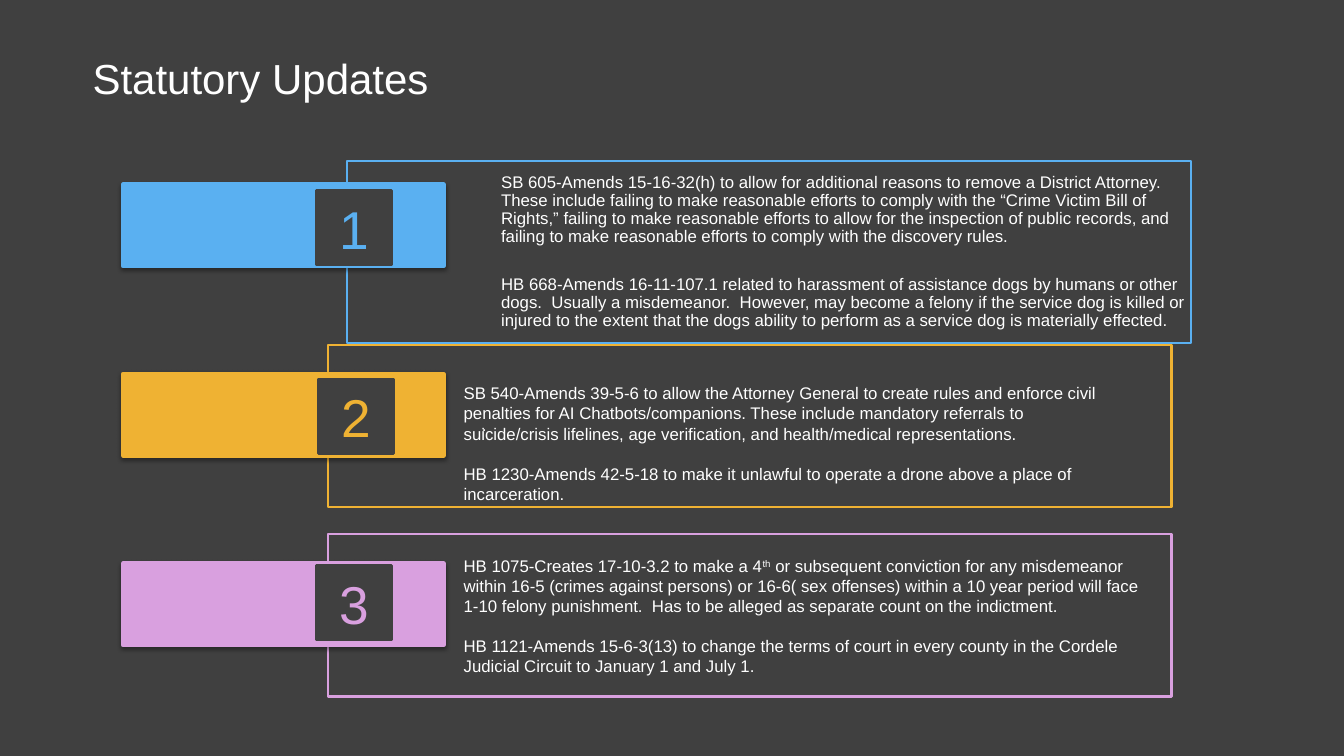
import pptx
import pptx.dml.color
import pptx.enum.shapes
import pptx.enum.text
import pptx.oxml
import pptx.util
from pptx.util import Inches

BACKGROUND = "404040"
WHITE = "FFFFFF"
ANCHOR = pptx.enum.text.MSO_ANCHOR
ALIGN = pptx.enum.text.PP_ALIGN
SHADOW = (
    '<a:effectLst xmlns:a="http://schemas.openxmlformats.org/drawingml/2006/main">'
    '<a:outerShdw blurRad="39370" dist="20320" dir="5400000" rotWithShape="0">'
    '<a:srgbClr val="000000"><a:alpha val="38000"/></a:srgbClr>'
    "</a:outerShdw></a:effectLst>"
)
BAR_LEFT, BAR_TOP, BAR_PITCH = 1.22, 1.83, 1.88

ROWS = [
    {
        "color": "5AB0F1",
        "frame": (3.44, 1.6, 8.37, 1.8),
        "badge": (3.14, 1.89),
        "frame_text": [
            ("SB 605-Amends 15-16-32(h) to allow for additional reasons to remove a "
             "District Attorney. These include failing to make reasonable efforts to "
             "comply with the “Crime Victim Bill of Rights,” failing to make reasonable "
             "efforts to allow for the inspection of public records, and failing to make "
             "reasonable efforts to comply with the discovery rules.",),
            ("HB 668-Amends 16-11-107.1 related to harassment of assistance dogs by "
             "humans or other dogs.  Usually a misdemeanor.  However, may become a felony "
             "if the service dog is killed or injured to the extent that the dogs ability "
             "to perform as a service dog is materially effected.",),
        ],
    },
    {
        "color": "EFB233",
        "frame": (3.25, 3.42, 8.37, 1.61),
        "badge": (3.16, 3.76),
        "frame_text": [(".",)],
        "note": (4.5, 3.75, 6.69, 1.31),
        "note_text": [
            ("SB 540-Amends 39-5-6 to allow the Attorney General to create rules and "
             "enforce civil penalties for AI Chatbots/companions. These include mandatory "
             "referrals to suicide/crisis lifelines, age verification, and health/medical "
             "representations.",),
            ("HB 1230-Amends 42-5-18 to make it unlawful to operate a drone above a place "
             "of incarceration.",),
        ],
    },
    {
        "color": "D9A0DF",
        "frame": (3.25, 5.3, 8.37, 1.61),
        "badge": (3.14, 5.61),
        "frame_text": [],
        "note": (4.5, 5.46, 7.01, 1.31),
        "note_text": [
            ("HB 1075-Creates 17-10-3.2 to make a 4", "th",
             " or subsequent conviction for any misdemeanor within 16-5 (crimes against "
             "persons) or 16-6( sex offenses) within a 10 year period will face 1-10 "
             "felony punishment.  Has to be alleged as separate count on the indictment.",),
            ("HB 1121-Amends 15-6-3(13) to change the terms of court in every county in "
             "the Cordele Judicial Circuit to January 1 and July 1.",),
        ],
    },
]


def rgb(value):
    """Turn a hex string into a colour."""
    return pptx.dml.color.RGBColor.from_string(value)


def write(shape, paragraphs, size=12, color=WHITE, gap=14.4, spacing=1.0,
          align=ALIGN.LEFT, anchor=ANCHOR.TOP, insets=(0.1, 0.05, 0.1, 0.05)):
    """Fill a shape with paragraphs, whose every second span is superscript."""
    frame = shape.text_frame
    left, top, right, bottom = map(Inches, insets)
    frame_format = {
        "word_wrap": True, "vertical_anchor": anchor, "margin_left": left,
        "margin_top": top, "margin_right": right, "margin_bottom": bottom,
    }
    for name, value in frame_format.items():
        setattr(frame, name, value)
    for index, spans in enumerate(paragraphs):
        para = frame.add_paragraph() if index else frame.paragraphs[0]
        para_format = {"alignment": align, "line_spacing": spacing,
                       "space_before": pptx.util.Pt(gap if index else 0)}
        for name, value in para_format.items():
            setattr(para, name, value)
        for position, text in enumerate(spans):
            span = para.add_run()
            span.text = text
            for name, value in {"name": "Arial", "size": pptx.util.Pt(size)}.items():
                setattr(span.font, name, value)
            span.font.color.rgb = rgb(color)
            if position % 2:
                span.font._element.set("baseline", "30000")


def add_box(page, box, line, width, fill=None):
    """Draw a rectangle with an outline and an optional fill."""
    shape = page.shapes.add_shape(
        pptx.enum.shapes.MSO_SHAPE.RECTANGLE, *map(Inches, box))
    shape.shadow.inherit = False
    shape.line.color.rgb = rgb(line)
    shape.line.width = pptx.util.Pt(width)
    if fill:
        shape.fill.solid()
        shape.fill.fore_color.rgb = rgb(fill)
    else:
        shape.fill.background()
    return shape


def add_bar(page, box, color):
    """Draw a coloured bar with a soft shadow below it."""
    properties = add_box(page, box, color, 3, color)._element.spPr
    properties.replace(properties.effectLst, pptx.oxml.parse_xml(SHADOW))


def add_title(page, box, text):
    """Place the slide title."""
    title = page.shapes.add_textbox(*map(Inches, box))
    write(title, [(text,)], size=30, spacing=0.9, anchor=ANCHOR.MIDDLE)


def add_row(page, index, row):
    """Draw one numbered row with its frame, bar, badge and text."""
    color = row["color"]
    frame = add_box(page, row["frame"], color, 1.5)
    write(frame, row["frame_text"], gap=21.4, spacing=0.9, anchor=ANCHOR.MIDDLE,
          insets=(1.53, 0.05, 0.05, 0.05))
    add_bar(page, (BAR_LEFT, BAR_TOP + index * BAR_PITCH, 3.18, 0.81), color)
    badge = add_box(page, (*row["badge"], 0.74, 0.74), BACKGROUND, 2, BACKGROUND)
    write(badge, [(str(index + 1),)], size=38, color=color, align=ALIGN.CENTER,
          anchor=ANCHOR.MIDDLE, insets=(0, 0, 0, 0))
    if "note" in row:
        note = page.shapes.add_textbox(*map(Inches, row["note"]))
        write(note, row["note_text"])


def main():
    """Build the slide and save it."""
    deck = pptx.Presentation()
    deck.slide_width, deck.slide_height = Inches(13.33), Inches(7.5)
    page = deck.slides.add_slide(deck.slide_layouts[6])
    page.background.fill.solid()
    page.background.fill.fore_color.rgb = rgb(BACKGROUND)
    add_title(page, (0.82, 0.31, 11.63, 0.99), "Statutory Updates")
    for index, row in enumerate(ROWS):
        add_row(page, index, row)
    deck.save("out.pptx")


if __name__ == "__main__":
    main()
